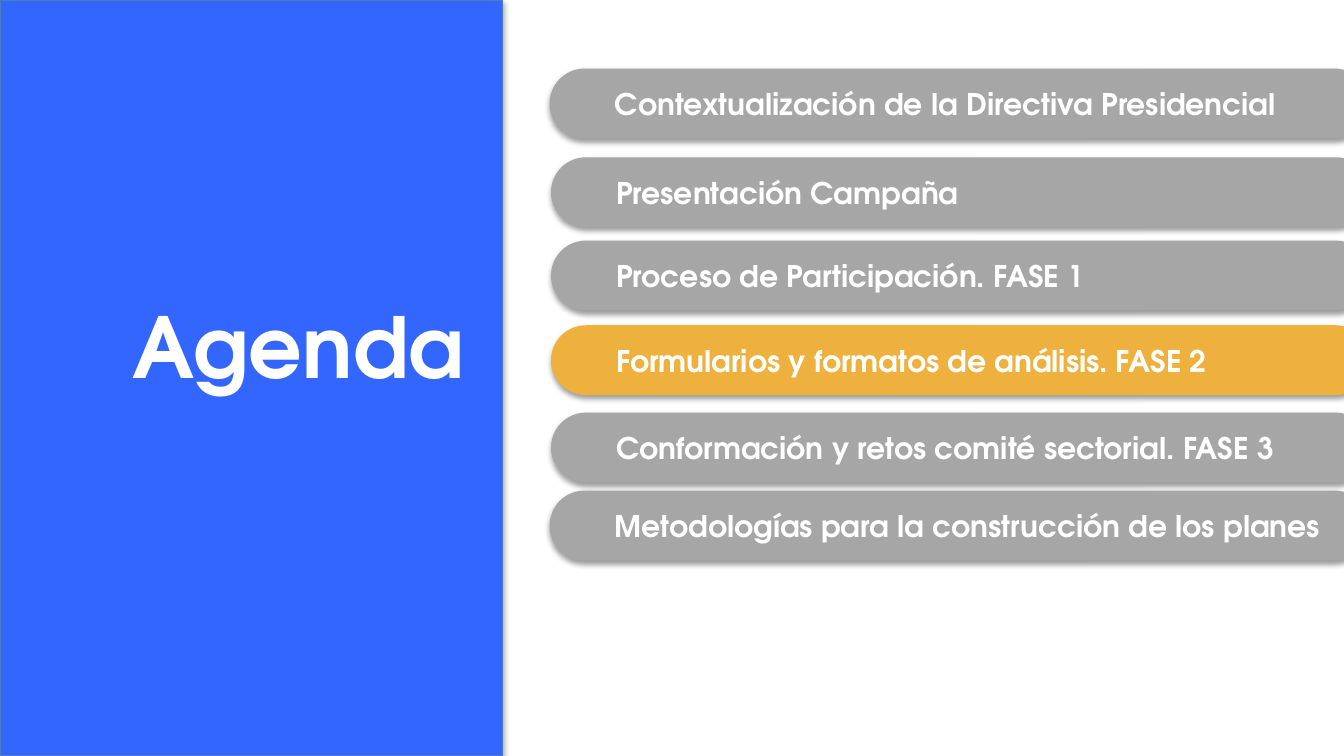
from lxml.etree import SubElement
from pptx import Presentation
from pptx.dml.color import RGBColor
from pptx.enum.shapes import MSO_SHAPE
from pptx.enum.text import MSO_ANCHOR, PP_ALIGN
from pptx.oxml.ns import qn
from pptx.util import Inches, Pt

TITLE = "Agenda"
# Text, left and top of the bar in inches, fill colour
TOPICS = [
    ("Contextualización de la Directiva Presidencial", 4.09, 0.51, "idle"),
    ("Presentación Campaña", 4.1, 1.17, "idle"),
    ("Proceso de Participación. FASE 1", 4.1, 1.79, "idle"),
    ("Formularios y formatos de análisis. FASE 2", 4.1, 2.42, "current"),
    ("Conformación y retos comité sectorial. FASE 3", 4.1, 3.07, "idle"),
    ("Metodologías para la construcción de los planes", 4.09, 3.65, "idle"),
]

COLORS = {
    "panel": "3366FF",
    "panel_line": "4B7EBC",
    "idle": "A6A6A6",
    "current": "EEB13D",
    "text": "FFFFFF",
    "shadow": "000000",
}
FONT = "TeX Gyre Adventor"
SLIDE_WIDTH = 10
SLIDE_HEIGHT = SLIDE_WIDTH * 9 / 16
PANEL_WIDTH = 3.74
BAR_WIDTH, BAR_HEIGHT = 6.1, 0.52
TITLE_BOX = (-0.35, 2.14, 3.9, 0.86)
BAR_TEXT = {
    "margin_left": Inches(0.41),
    "margin_right": Inches(0.1),
    "margin_top": Inches(0.05),
    "margin_bottom": Inches(0.05),
    "vertical_anchor": MSO_ANCHOR.MIDDLE,
    "word_wrap": True,
}


def color(name):
    return RGBColor.from_string(COLORS[name])


def add_shadow(shape, opacity, distance):
    """Cast a soft shadow straight down; opacity in percent, distance in points."""
    shape.shadow.inherit = False
    effects = shape._element.spPr.find(qn("a:effectLst"))
    shadow = SubElement(effects, qn("a:outerShdw"), {
        "blurRad": str(Pt(3.1)),
        "dist": str(Pt(distance)),
        "dir": str(90 * 60000),
        "rotWithShape": "0",
    })
    shade = SubElement(shadow, qn("a:srgbClr"), val=COLORS["shadow"])
    SubElement(shade, qn("a:alpha"), val=str(opacity * 1000))


def add_filled(slide, kind, box, fill):
    shape = slide.shapes.add_shape(kind, *map(Inches, box))
    shape.fill.solid()
    shape.fill.fore_color.rgb = color(fill)
    return shape


def write(frame, text, size, alignment):
    paragraph = frame.paragraphs[0]
    paragraph.alignment = alignment
    run = paragraph.add_run()
    run.text = text
    for name, value in {"name": FONT, "size": Pt(size), "bold": True}.items():
        setattr(run.font, name, value)
    run.font.color.rgb = color("text")


def add_panel(slide):
    panel = add_filled(slide, MSO_SHAPE.RECTANGLE,
                       (0, 0, PANEL_WIDTH, SLIDE_HEIGHT), "panel")
    panel.line.color.rgb = color("panel_line")
    panel.line.width = Pt(0.75)
    add_shadow(panel, opacity=35, distance=1.8)


def add_title(slide):
    frame = slide.shapes.add_textbox(*map(Inches, TITLE_BOX)).text_frame
    frame.word_wrap = True
    write(frame, TITLE, 45, PP_ALIGN.RIGHT)


def add_topic(slide, text, left, top, fill):
    bar = add_filled(slide, MSO_SHAPE.ROUNDED_RECTANGLE,
                     (left, top, BAR_WIDTH, BAR_HEIGHT), fill)
    bar.adjustments[0] = 0.5
    bar.line.fill.background()
    add_shadow(bar, opacity=38, distance=1.6)
    for name, value in BAR_TEXT.items():
        setattr(bar.text_frame, name, value)
    write(bar.text_frame, text, 16, PP_ALIGN.LEFT)


def main():
    presentation = Presentation()
    presentation.slide_width = Inches(SLIDE_WIDTH)
    presentation.slide_height = Inches(SLIDE_HEIGHT)
    slide = presentation.slides.add_slide(presentation.slide_layouts[6])
    add_panel(slide)
    add_title(slide)
    for topic in TOPICS:
        add_topic(slide, *topic)
    presentation.save("out.pptx")


if __name__ == "__main__":
    main()
